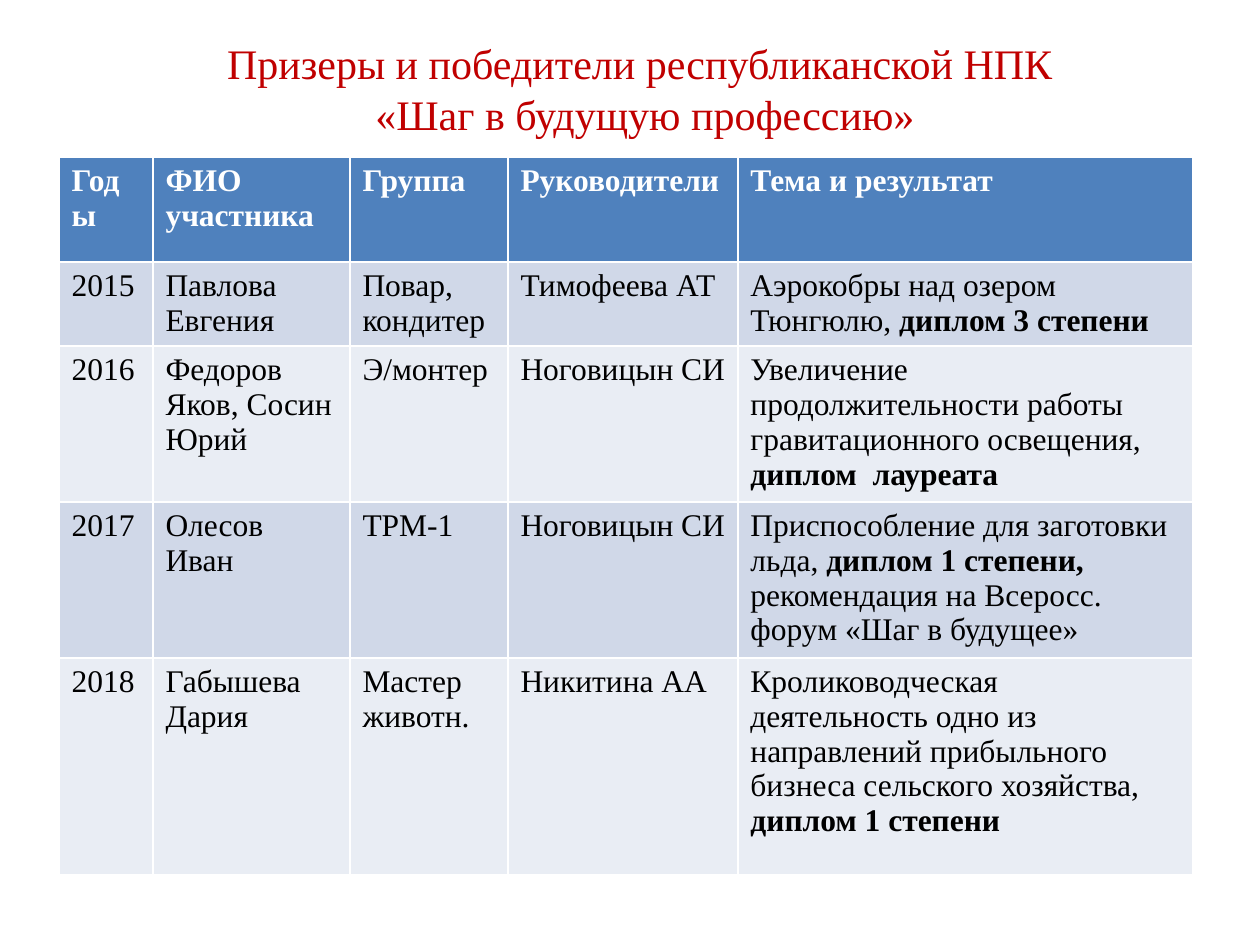
from pptx import Presentation
from pptx.dml.color import RGBColor
from pptx.enum.text import MSO_ANCHOR, PP_ALIGN
from pptx.util import Emu, Pt

PX = 914400 / 126
FONT = "Times New Roman"
RED = RGBColor(0xC0, 0x00, 0x00)
WHITE = RGBColor(0xFF, 0xFF, 0xFF)
BLACK = RGBColor(0x00, 0x00, 0x00)
HEADER_BLUE = RGBColor(0x4F, 0x81, 0xBD)
BANDS = [RGBColor(0xE9, 0xED, 0xF4), RGBColor(0xD0, 0xD8, 0xE8)]

TITLE_FORMAT = {"name": FONT, "size": Pt(24)}
CELL_FORMAT = {"name": FONT, "size": Pt(18)}

TITLE_LINES = ["Призеры и победители республиканской НПК ", "«Шаг в будущую профессию»"]
COLUMN_WIDTHS = [94, 197, 158, 230, 455]
ROW_HEIGHTS = [105, 84, 156, 156, 217]
BOLD_MARK = "*"
WINNERS = [
    ["Годы", "ФИО участника", "Группа", "Руководители", "Тема и результат"],
    ["2015", "Павлова Евгения", "Повар, кондитер", "Тимофеева АТ",
     "Аэрокобры над озером Тюнгюлю, *диплом 3 степени"],
    ["2016", "Федоров Яков, Сосин Юрий", "Э/монтер", "Ноговицын СИ",
     "Увеличение продолжительности работы гравитационного освещения, *диплом  лауреата"],
    ["2017", "Олесов Иван", "ТРМ-1", "Ноговицын СИ",
     "Приспособление для заготовки льда, *диплом 1 степени, "
     "*рекомендация на Всеросс. форум «Шаг в будущее»"],
    ["2018", "Габышева Дария", "Мастер\nживотн.", "Никитина АА",
     "Кролиководческая деятельность одно из направлений прибыльного бизнеса "
     "сельского хозяйства, *диплом 1 степени"],
]


def px(length):
    return Emu(round(length * PX))


def apply_format(font, values, color):
    for attribute, value in values.items():
        setattr(font, attribute, value)
    font.color.rgb = color


def place_title(slide, left, top, width, height):
    title = slide.shapes.title
    box = {"left": left, "top": top, "width": width, "height": height}
    for side, length in box.items():
        setattr(title, side, px(length))
    frame = title.text_frame
    frame.word_wrap = True
    frame.vertical_anchor = MSO_ANCHOR.MIDDLE
    heading = frame.paragraphs[0]
    heading.alignment = PP_ALIGN.CENTER
    for index, line in enumerate(TITLE_LINES):
        if index:
            heading.add_line_break()
        run = heading.add_run()
        run.text = line
        apply_format(run.font, TITLE_FORMAT, RED)
    apply_format(heading.font, TITLE_FORMAT, RED)


def fill_cell(cell, content, is_header, background):
    cell.fill.solid()
    cell.fill.fore_color.rgb = background
    for index, line in enumerate(content.split("\n")):
        frame = cell.text_frame
        paragraph = frame.add_paragraph() if index else frame.paragraphs[0]
        for part, words in enumerate(line.split(BOLD_MARK)):
            run = paragraph.add_run()
            run.text = words
            apply_format(run.font, CELL_FORMAT, WHITE if is_header else BLACK)
            run.font.bold = is_header or part % 2 == 1


def place_winners(slide, left, top):
    winners = slide.shapes.add_table(
        len(ROW_HEIGHTS), len(COLUMN_WIDTHS), px(left), px(top),
        px(sum(COLUMN_WIDTHS)), px(sum(ROW_HEIGHTS))).table
    for column, width in zip(winners.columns, COLUMN_WIDTHS):
        column.width = px(width)
    for row, height in zip(winners.rows, ROW_HEIGHTS):
        row.height = px(height)
    for row_index, entry in enumerate(WINNERS):
        is_header = row_index == 0
        background = HEADER_BLUE if is_header else BANDS[row_index % 2]
        for column_index, content in enumerate(entry):
            fill_cell(winners.cell(row_index, column_index), content, is_header, background)


def main():
    presentation = Presentation()
    presentation.slide_width = px(1260)
    presentation.slide_height = px(945)
    slide = presentation.slides.add_slide(presentation.slide_layouts[5])
    place_title(slide, 78, 29, 1134, 118)
    place_winners(slide, 59, 157)
    presentation.save("out.pptx")


if __name__ == "__main__":
    main()
